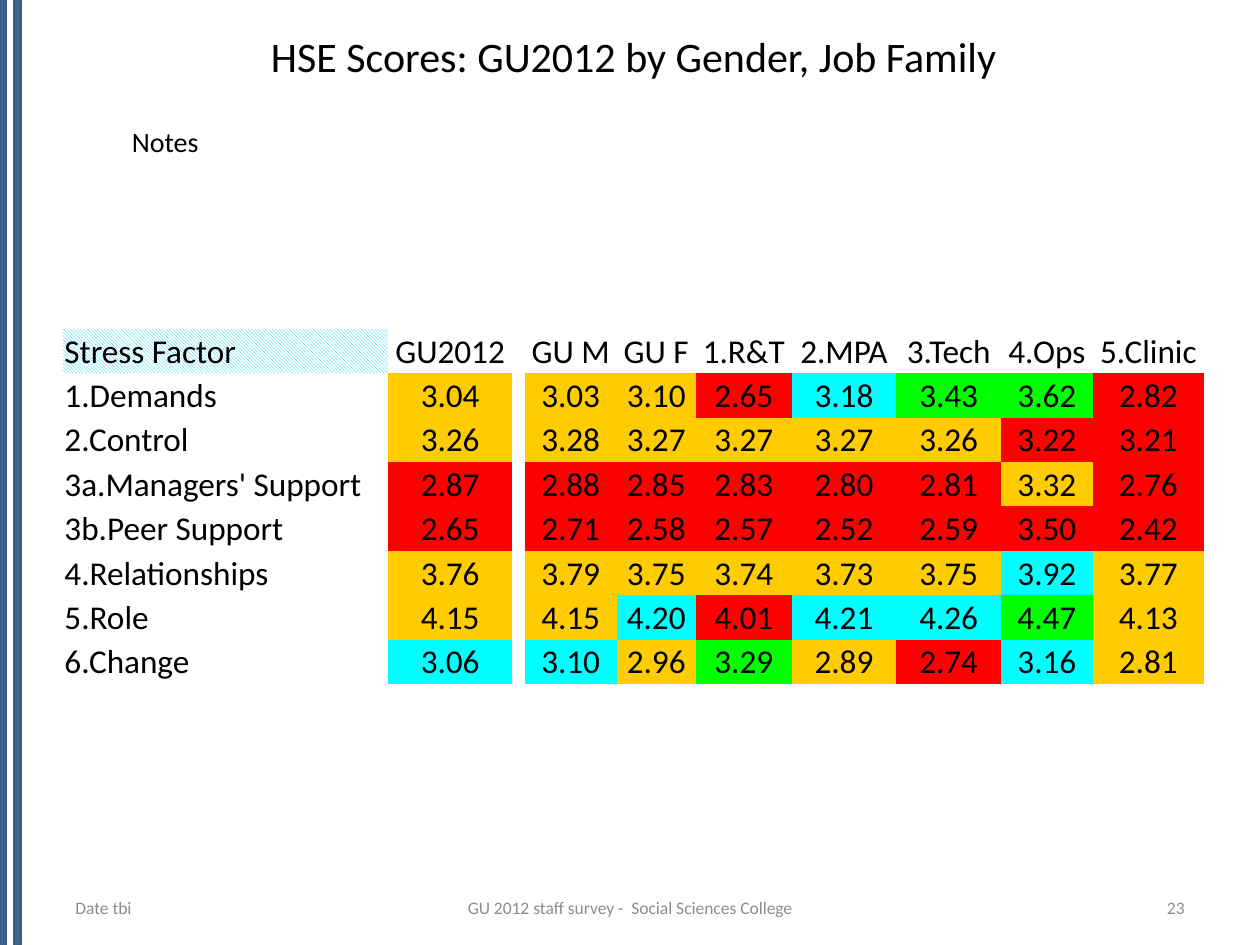
from pptx import Presentation
from pptx.dml.color import RGBColor
from pptx.enum.dml import MSO_PATTERN
from pptx.enum.shapes import MSO_SHAPE
from pptx.enum.text import MSO_ANCHOR, PP_ALIGN
from pptx.util import Cm, Pt

FONT = "Calibri"
BLACK = RGBColor(0x00, 0x00, 0x00)
WHITE = RGBColor(0xFF, 0xFF, 0xFF)
GREY = RGBColor(0x8C, 0x8C, 0x8C)
BAR_FILL = RGBColor(0x42, 0x72, 0x94)
BAR_LINE = RGBColor(0x3A, 0x5F, 0x8C)
HATCH = RGBColor(0x00, 0xCC, 0xFF)
RATINGS = {
    "R": RGBColor(0xFF, 0x00, 0x00),
    "A": RGBColor(0xFF, 0xCC, 0x00),
    "C": RGBColor(0x00, 0xFF, 0xFF),
    "G": RGBColor(0x00, 0xFF, 0x00),
}
NO_STYLE_NO_GRID = "{2D5ABB26-0587-4C30-8999-92F81FD0307C}"

GAP_COLUMN = 2
COLUMN_WIDTHS = [6.55, 2.51, 0.25, 1.85, 1.6, 1.93, 2.11, 2.11, 1.85, 2.24]
HEADINGS = ["GU2012", "GU M", "GU F", "1.R&T", "2.MPA", "3.Tech", "4.Ops", "5.Clinic"]
# Factor, one rating letter per score, scores in the order of HEADINGS
SCORES = [
    ("1.Demands", "AAARCGGR", "3.04 3.03 3.10 2.65 3.18 3.43 3.62 2.82"),
    ("2.Control", "AAAAAARR", "3.26 3.28 3.27 3.27 3.27 3.26 3.22 3.21"),
    ("3a.Managers' Support", "RRRRRRAR", "2.87 2.88 2.85 2.83 2.80 2.81 3.32 2.76"),
    ("3b.Peer Support", "RRRRRRRR", "2.65 2.71 2.58 2.57 2.52 2.59 3.50 2.42"),
    ("4.Relationships", "AAAAAACA", "3.76 3.79 3.75 3.74 3.73 3.75 3.92 3.77"),
    ("5.Role", "AACRCCGA", "4.15 4.15 4.20 4.01 4.21 4.26 4.47 4.13"),
    ("6.Change", "CCAGARCA", "3.06 3.10 2.96 3.29 2.89 2.74 3.16 2.81"),
]


def write(frame, text, size, color=BLACK, align=PP_ALIGN.LEFT):
    para = frame.paragraphs[0]
    para.alignment = align
    span = para.add_run()
    span.text = text
    span.font.name = FONT
    span.font.size = Pt(size)
    span.font.color.rgb = color


def add_text(page, box, text, size, color=BLACK, align=PP_ALIGN.LEFT,
             anchor=MSO_ANCHOR.TOP):
    frame = page.shapes.add_textbox(*box).text_frame
    frame.word_wrap = True
    frame.vertical_anchor = anchor
    write(frame, text, size, color, align)


def add_side_bars(page, box):
    left, top, width, height = box
    bar_width = Cm(0.1)
    for bar_left in (left, left + width - bar_width):
        bar = page.shapes.add_shape(MSO_SHAPE.RECTANGLE, bar_left, top, bar_width, height)
        bar.shadow.inherit = False
        bar.fill.solid()
        bar.fill.fore_color.rgb = BAR_FILL
        bar.line.color.rgb = BAR_LINE
        bar.line.width = Pt(2)


def add_title(page, box, text):
    title = page.shapes.title
    title.left, title.top, title.width, title.height = box
    title.text_frame.vertical_anchor = MSO_ANCHOR.MIDDLE
    write(title.text_frame, text, 24, align=PP_ALIGN.CENTER)


def add_footer(page, box):
    left, top, width, height = box
    side, middle = Cm(5.93), Cm(8.04)
    parts = [
        (left, side, "Date tbi", PP_ALIGN.LEFT),
        (left + (width - middle) // 2, middle,
         "GU 2012 staff survey -  Social Sciences College", PP_ALIGN.CENTER),
        (left + width - side, side, "23", PP_ALIGN.RIGHT),
    ]
    for part_left, part_width, text, align in parts:
        add_text(page, (part_left, top, part_width, height), text, 10, GREY,
                 align, MSO_ANCHOR.MIDDLE)


def fill_cell(cell, text, align, color=None):
    cell.margin_left = cell.margin_right = cell.margin_top = Cm(0.03)
    cell.margin_bottom = 0
    cell.vertical_anchor = MSO_ANCHOR.MIDDLE
    if color is None:
        cell.fill.background()
    else:
        cell.fill.solid()
        cell.fill.fore_color.rgb = color
    if text:
        write(cell.text_frame, text, 19, align=align)


def add_score_table(page, box):
    rows = [("Stress Factor", [None] * len(HEADINGS), HEADINGS)]
    rows += [(factor, [RATINGS[letter] for letter in letters], scores.split())
             for factor, letters, scores in SCORES]
    holder = page.shapes.add_table(len(rows), len(COLUMN_WIDTHS), *box)
    table = holder.table
    table.first_row = table.horz_banding = False
    holder.element.xpath(".//a:tableStyleId")[0].text = NO_STYLE_NO_GRID

    for column, width in zip(table.columns, COLUMN_WIDTHS):
        column.width = Cm(width)
    for row, (factor, colors, values) in enumerate(rows):
        table.rows[row].height = box[3] // len(rows)
        fill_cell(table.cell(row, 0), factor, PP_ALIGN.LEFT)
        fill_cell(table.cell(row, GAP_COLUMN), "", PP_ALIGN.CENTER)
        columns = [c for c in range(1, len(COLUMN_WIDTHS)) if c != GAP_COLUMN]
        for column, value, color in zip(columns, values, colors):
            fill_cell(table.cell(row, column), value, PP_ALIGN.CENTER, color)

    corner = table.cell(0, 0).fill
    corner.patterned()
    corner.pattern = MSO_PATTERN.LIGHT_DOWNWARD_DIAGONAL
    corner.fore_color.rgb = HATCH
    corner.back_color.rgb = WHITE


def main():
    deck = Presentation()
    deck.slide_width, deck.slide_height = Cm(25.4), Cm(19.05)
    page = deck.slides.add_slide(deck.slide_layouts[5])
    add_side_bars(page, (0, 0, Cm(0.4), deck.slide_height))
    add_title(page, (Cm(1.27), Cm(0.33), Cm(23.01), Cm(1.6)),
              "HSE Scores: GU2012 by Gender, Job Family")
    add_footer(page, (Cm(1.27), Cm(17.93), Cm(22.86), Cm(0.74)))
    add_text(page, (Cm(2.41), Cm(2.39), Cm(20.7), Cm(0.94)), "Notes", 16)
    add_score_table(page, (Cm(1.27), Cm(6.63), Cm(23), Cm(7.16)))
    deck.save("out.pptx")


if __name__ == "__main__":
    main()
